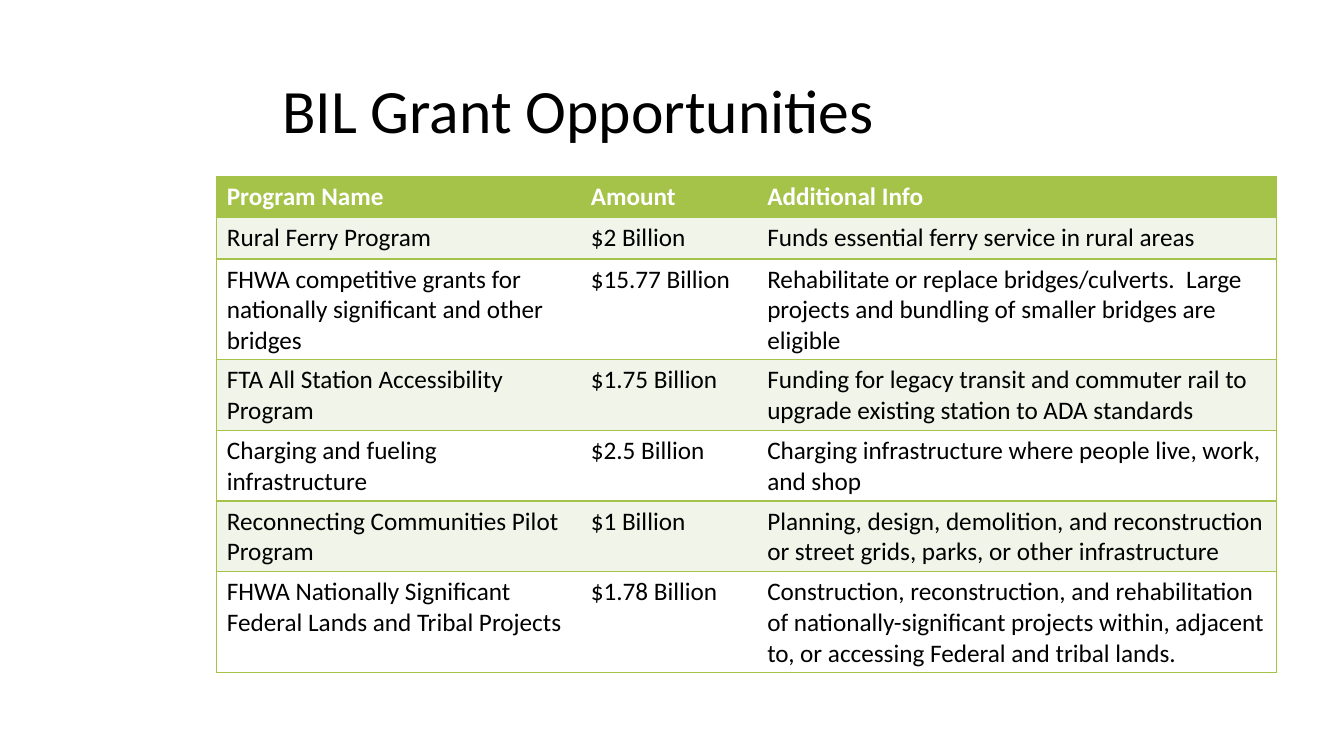
from lxml.etree import SubElement
from pptx import Presentation
from pptx.dml.color import RGBColor
from pptx.enum.text import MSO_ANCHOR
from pptx.oxml.ns import qn
from pptx.util import Inches, Pt

BLACK = RGBColor(0x00, 0x00, 0x00)
WHITE = RGBColor(0xFF, 0xFF, 0xFF)
GREEN = RGBColor(0xA5, 0xC2, 0x49)
PALE_GREEN = RGBColor(0xF0, 0xF4, 0xE9)

TITLE_FONT = {"name": "Calibri", "size": Pt(44), "bold": False}
HEADER_FONT = {"name": "Calibri", "size": Pt(18), "bold": True}
BODY_FONT = {"name": "Calibri", "size": Pt(18), "bold": False}

COLUMN_WIDTHS = [3.61, 1.75, 5.15]
ROW_HEIGHT = 0.41
GRANTS = [
    ("Program Name", "Amount", "Additional Info"),
    ("Rural Ferry Program", "$2 Billion",
     "Funds essential ferry service in rural areas"),
    ("FHWA competitive grants for nationally significant and other bridges",
     "$15.77 Billion",
     "Rehabilitate or replace bridges/culverts.  Large projects and bundling "
     "of smaller bridges are eligible"),
    ("FTA All Station Accessibility Program", "$1.75 Billion",
     "Funding for legacy transit and commuter rail to upgrade existing "
     "station to ADA standards"),
    ("Charging and fueling infrastructure", "$2.5 Billion",
     "Charging infrastructure where people live, work, and shop"),
    ("Reconnecting Communities Pilot Program", "$1 Billion",
     "Planning, design, demolition, and reconstruction or street grids, "
     "parks, or other infrastructure"),
    ("FHWA Nationally Significant Federal Lands and Tribal Projects",
     "$1.78 Billion",
     "Construction, reconstruction, and rehabilitation of "
     "nationally-significant projects within, adjacent to, or accessing "
     "Federal and tribal lands."),
]


def write_text(text_frame, text, font_format, color):
    paragraph = text_frame.paragraphs[0]
    run = paragraph.add_run()
    run.text = text
    for name, value in font_format.items():
        setattr(run.font, name, value)
    run.font.color.rgb = color
    return paragraph


def add_title(slide, text):
    box = slide.shapes.add_textbox(Inches(2.7), Inches(0.4),
                                   Inches(9.71), Inches(1.45))
    box.text_frame.word_wrap = True
    box.text_frame.vertical_anchor = MSO_ANCHOR.MIDDLE
    paragraph = write_text(box.text_frame, text, TITLE_FONT, BLACK)
    paragraph.line_spacing = 0.9


def set_borders(cell, visible_sides):
    """Draw the named sides in green and clear the others."""
    properties = cell._tc.get_or_add_tcPr()
    for side in "LRTB":
        line = SubElement(properties, qn(f"a:ln{side}"), w=str(Pt(1)))
        if side in visible_sides:
            fill = SubElement(line, qn("a:solidFill"))
            SubElement(fill, qn("a:srgbClr"), val=str(GREEN))
        else:
            SubElement(line, qn("a:noFill"))


def fill_cell(cell, text, row, column):
    # Only the outer edges of the table have vertical lines
    sides = "TB"
    if column == 0:
        sides += "L"
    if column == len(COLUMN_WIDTHS) - 1:
        sides += "R"
    set_borders(cell, sides)

    # Header row, then alternating bands
    cell.fill.solid()
    if row == 0:
        cell.fill.fore_color.rgb = GREEN
        write_text(cell.text_frame, text, HEADER_FONT, WHITE)
    else:
        cell.fill.fore_color.rgb = PALE_GREEN if row % 2 else WHITE
        write_text(cell.text_frame, text, BODY_FONT, BLACK)


def add_grant_table(slide):
    frame = slide.shapes.add_table(
        len(GRANTS), len(COLUMN_WIDTHS), Inches(2.15), Inches(1.75),
        Inches(sum(COLUMN_WIDTHS)), Inches(ROW_HEIGHT * len(GRANTS)))
    table = frame.table
    for column, width in zip(table.columns, COLUMN_WIDTHS):
        column.width = Inches(width)
    for row, grant in enumerate(GRANTS):
        for column, text in enumerate(grant):
            fill_cell(table.cell(row, column), text, row, column)


def main():
    presentation = Presentation()
    presentation.slide_width = Inches(13.33)
    presentation.slide_height = Inches(7.5)
    slide = presentation.slides.add_slide(presentation.slide_layouts[6])

    add_title(slide, "BIL Grant Opportunities")
    add_grant_table(slide)

    presentation.save("out.pptx")


if __name__ == "__main__":
    main()
